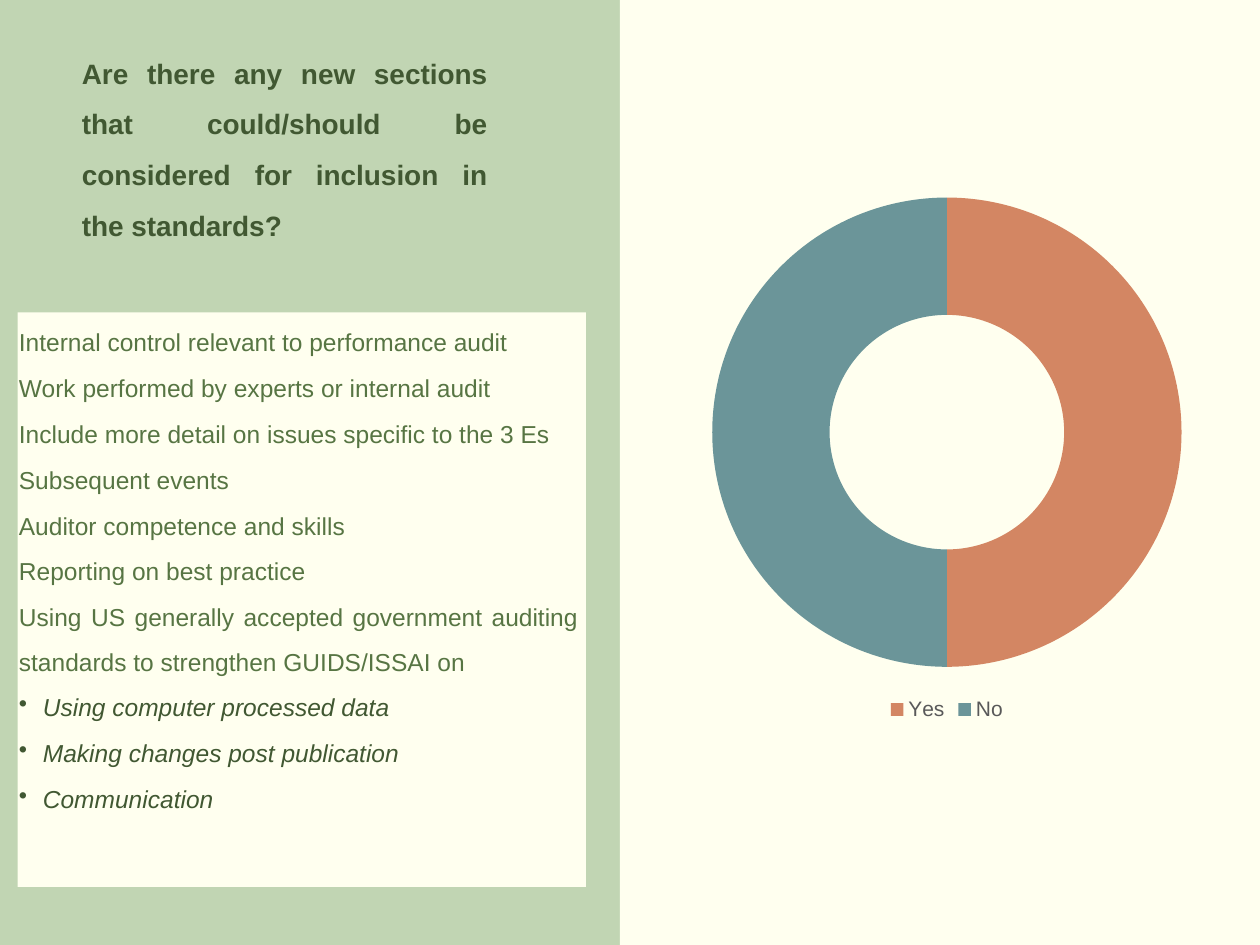
from pptx import Presentation
from pptx.chart.data import CategoryChartData
from pptx.dml.color import RGBColor
from pptx.enum.chart import XL_CHART_TYPE, XL_LEGEND_POSITION
from pptx.enum.shapes import MSO_SHAPE
from pptx.enum.text import PP_ALIGN
from pptx.oxml.xmlchemy import OxmlElement
from pptx.util import Inches, Pt

COLORS = {"sage": "C1D5B3", "cream": "FFFFEF", "green": "577543",
          "dark": "415832", "grey": "595959"}
TITLE = ("Are there any new sections that could/should be considered "
         "for inclusion in the standards?")
TOPICS = [
    "Internal control relevant to performance audit",
    "Work performed by experts or internal audit",
    "Include more detail on issues specific to the 3 Es",
    "Subsequent events",
    "Auditor competence and skills",
    "Reporting on best practice",
    "Using US generally accepted government auditing standards "
    "to strengthen GUIDS/ISSAI on",
]
POINTS = ["Using computer processed data", "Making changes post publication",
          "Communication"]
ANSWERS = [("Yes", 50, "D38663"), ("No", 50, "6B9599")]
PANELS = [(0.14, 2.48, 4.51, 4.56), (4.92, 0, 5.13, 7.5)]


def color(name):
    return RGBColor.from_string(COLORS.get(name, name))


def place(box):
    return [Inches(n) for n in box]


def add_panel(slide, box):
    panel = slide.shapes.add_shape(MSO_SHAPE.RECTANGLE, *place(box))
    panel.shadow.inherit = False
    panel.fill.solid()
    panel.fill.fore_color.rgb = color("cream")
    panel.line.fill.background()


def add_text(slide, box, lines):
    frame = slide.shapes.add_textbox(*place(box)).text_frame
    frame.word_wrap = True
    frame.margin_left = frame.margin_right = 0
    frame.margin_top = frame.margin_bottom = 0
    for i, (text, size, tone, bold, point) in enumerate(lines):
        para = frame.paragraphs[0] if i == 0 else frame.add_paragraph()
        para.alignment = PP_ALIGN.JUSTIFY
        para.line_spacing = 1.51
        para.space_before = Pt(0.8)
        props = para._p.get_or_add_pPr()
        props.set("marL", str(Inches(0.2 if point else 0.01)))
        props.set("indent", str(Inches(-0.19 if point else 0)))
        props.set("marR", str(Inches(0.23)))
        if point:
            mark = OxmlElement("a:buChar")
            mark.set("char", "•")
            props.append(mark)
        run = para.add_run()
        run.text = text
        font = run.font
        font.name, font.size = "Arial", Pt(size)
        font.bold, font.italic = bold, point
        font.color.rgb = color(tone)


def add_ring(slide, box):
    data = CategoryChartData()
    data.categories = [name for name, _, _ in ANSWERS]
    data.add_series("Series 1", [value for _, value, _ in ANSWERS])
    chart = slide.shapes.add_chart(XL_CHART_TYPE.DOUGHNUT, *place(box), data).chart
    chart.has_title = False
    chart.font.name, chart.font.size = "Arial", Pt(10)
    chart.has_legend = True
    legend = chart.legend
    legend.position = XL_LEGEND_POSITION.BOTTOM
    legend.include_in_layout = False
    legend.font.name, legend.font.size = "Arial", Pt(12)
    legend.font.color.rgb = color("grey")
    plot = chart.plots[0]
    plot.vary_by_categories = True
    for i, (_, _, tone) in enumerate(ANSWERS):
        part = plot.series[0].points[i].format
        part.fill.solid()
        part.fill.fore_color.rgb = color(tone)
        part.line.fill.background()


def main():
    deck = Presentation()
    deck.slide_width, deck.slide_height = Inches(10), Inches(7.5)
    slide = deck.slides.add_slide(deck.slide_layouts[6])
    slide.background.fill.solid()
    slide.background.fill.fore_color.rgb = color("sage")
    for box in PANELS:
        add_panel(slide, box)
    add_ring(slide, (5.07, 1.43, 4.89, 4.33))
    add_text(slide, (0.14, 2.48, 4.68, 4.04),
             [(text, 14, "green", False, False) for text in TOPICS]
             + [(text, 14, "dark", False, True) for text in POINTS])
    add_text(slide, (0.64, 0.31, 3.46, 1.63), [(TITLE, 16, "dark", True, False)])
    deck.save("out.pptx")


if __name__ == "__main__":
    main()
